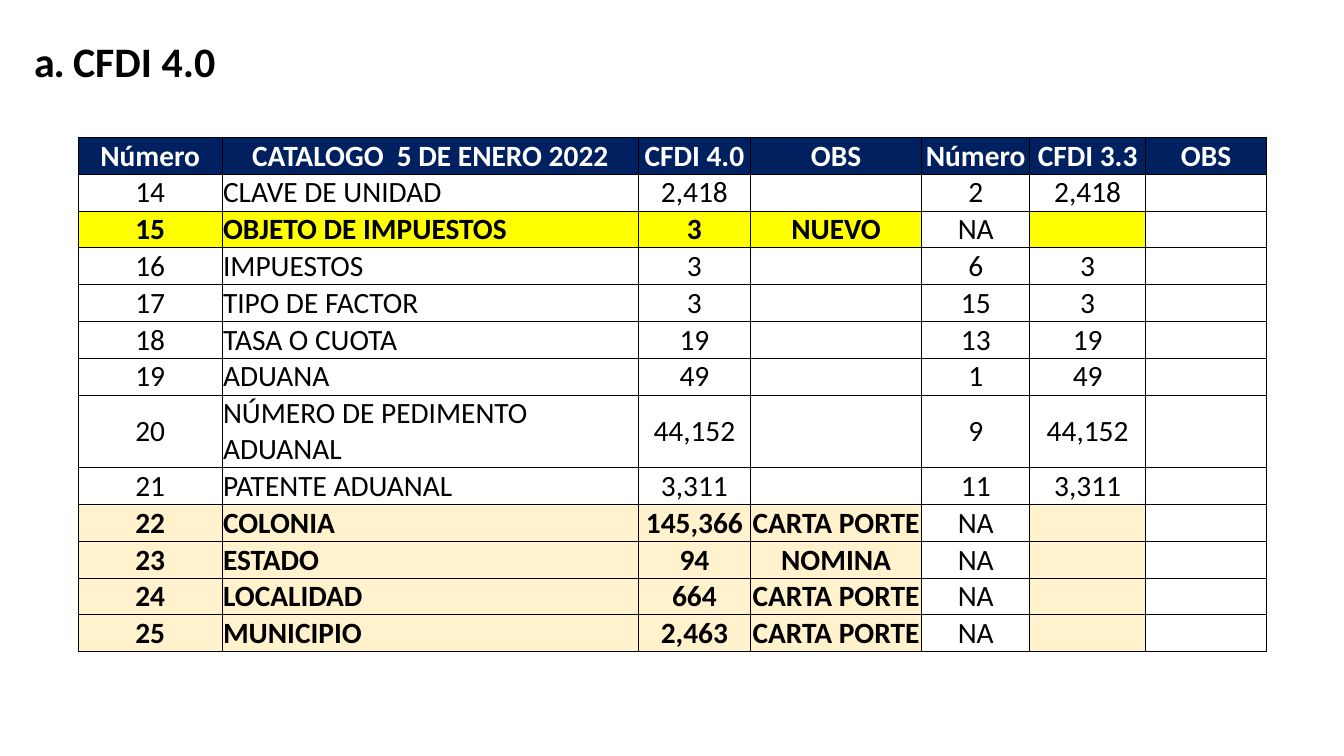
"""Build the slide that compares the CFDI 4.0 and CFDI 3.3 catalogues."""
from lxml.etree import SubElement
from pptx import Presentation
from pptx.dml.color import RGBColor
from pptx.enum.text import MSO_ANCHOR, PP_ALIGN
from pptx.oxml.ns import qn
from pptx.util import Cm, Pt

NAVY, YELLOW, CREAM = "002060", "FFFF00", "FFF2CC"
BLACK, WHITE = "000000", "FFFFFF"
COLUMN_WIDTHS = [3.63, 10.49, 2.82, 4.32, 2.72, 2.92, 3.05]
LINE_HEIGHT = 0.91
NAME_COLUMN = 1
HIGHLIGHTED_COLUMNS = (0, 1, 2, 3, 5)
BOLD_COLUMNS = (0, 1, 2, 3)
TWO_LINE_NAME = "NÚMERO DE PEDIMENTO ADUANAL"

HEADER = ["Número", "CATALOGO  5 DE ENERO 2022", "CFDI 4.0", "OBS", "Número", "CFDI 3.3", "OBS"]
CATALOGUES = [
    (["14", "CLAVE DE UNIDAD", "2,418", "", "2", "2,418", ""], None),
    (["15", "OBJETO DE IMPUESTOS", "3", "NUEVO", "NA", "", ""], YELLOW),
    (["16", "IMPUESTOS", "3", "", "6", "3", ""], None),
    (["17", "TIPO DE FACTOR", "3", "", "15", "3", ""], None),
    (["18", "TASA O CUOTA", "19", "", "13", "19", ""], None),
    (["19", "ADUANA", "49", "", "1", "49", ""], None),
    (["20", TWO_LINE_NAME, "44,152", "", "9", "44,152", ""], None),
    (["21", "PATENTE ADUANAL", "3,311", "", "11", "3,311", ""], None),
    (["22", "COLONIA", "145,366", "CARTA PORTE", "NA", "", ""], CREAM),
    (["23", "ESTADO", "94", "NOMINA", "NA", "", ""], CREAM),
    (["24", "LOCALIDAD", "664", "CARTA PORTE", "NA", "", ""], CREAM),
    (["25", "MUNICIPIO", "2,463", "CARTA PORTE", "NA", "", ""], CREAM),
]


def color(hex_string):
    """Return the colour for a hex string."""
    return RGBColor.from_string(hex_string)


class SlideBuilder:
    """Hold the text style and the current slide."""

    def __init__(self, slide, font_name):
        """Keep the slide and the font."""
        self.slide = slide
        self.font_name = font_name

    def format_run(self, run, size, hex_color, bold):
        """Set the font of one run."""
        run.font.name = self.font_name
        run.font.size = Pt(size)
        run.font.bold = bold
        run.font.color.rgb = color(hex_color)

    def title(self, number, text, left, top, width, height):
        """Place the title, with its number set slightly tighter."""
        title = self.slide.shapes.title
        title.left, title.top, title.width, title.height = map(Cm, (left, top, width, height))
        frame = title.text_frame
        frame.margin_left = frame.margin_right = frame.margin_top = frame.margin_bottom = 0
        frame.vertical_anchor = MSO_ANCHOR.BOTTOM
        frame.word_wrap = True
        paragraph = frame.paragraphs[0]
        paragraph.text = number
        paragraph.add_run().text = text
        paragraph.alignment = PP_ALIGN.LEFT
        for run in paragraph.runs:
            self.format_run(run, 30, BLACK, True)
        paragraph.runs[0]._r.get_or_add_rPr().set("spc", "-90")

    def borders(self, cell):
        """Draw thin black lines on all sides of a cell."""
        properties = cell._tc.get_or_add_tcPr()
        for side in ("a:lnL", "a:lnR", "a:lnT", "a:lnB"):
            line = SubElement(properties, qn(side), w=str(Pt(0.5)))
            fill = SubElement(line, qn("a:solidFill"))
            SubElement(fill, qn("a:srgbClr"), val=BLACK)

    def cell(self, cell, text, fill, hex_color, bold, alignment):
        """Fill, frame and write one table cell."""
        cell.margin_left = cell.margin_right = cell.margin_top = Cm(0.02)
        cell.margin_bottom = 0
        cell.vertical_anchor = MSO_ANCHOR.MIDDLE
        self.borders(cell)
        if fill:
            cell.fill.solid()
            cell.fill.fore_color.rgb = color(fill)
        else:
            cell.fill.background()
        if text:
            paragraph = cell.text_frame.paragraphs[0]
            paragraph.text = text
            paragraph.alignment = alignment
            self.format_run(paragraph.runs[0], 21, hex_color, bold)

    def table(self, left, top):
        """Add the catalogue table with its header row."""
        lines = [2 if TWO_LINE_NAME in values else 1 for values, _ in CATALOGUES]
        heights = [LINE_HEIGHT * count for count in [1] + lines]
        frame = self.slide.shapes.add_table(
            len(heights), len(HEADER), Cm(left), Cm(top), Cm(sum(COLUMN_WIDTHS)), Cm(sum(heights)))
        table = frame.table
        table.first_row = table.horz_banding = False
        for column, width in zip(table.columns, COLUMN_WIDTHS):
            column.width = Cm(width)
        for row, height in zip(table.rows, heights):
            row.height = Cm(height)
        for column, text in enumerate(HEADER):
            self.cell(table.cell(0, column), text, NAVY, WHITE, True, PP_ALIGN.CENTER)
        for row, (values, highlight) in enumerate(CATALOGUES, start=1):
            for column, text in enumerate(values):
                fill = highlight if column in HIGHLIGHTED_COLUMNS else None
                bold = highlight is not None and column in BOLD_COLUMNS
                alignment = PP_ALIGN.LEFT if column == NAME_COLUMN else PP_ALIGN.CENTER
                self.cell(table.cell(row, column), text, fill, BLACK, bold, alignment)


def main():
    """Create and save the presentation."""
    presentation = Presentation()
    presentation.slide_width = Cm(33.87)
    presentation.slide_height = Cm(19.05)
    builder = SlideBuilder(presentation.slides.add_slide(presentation.slide_layouts[5]), "Calibri")
    builder.title("a. ", "CFDI 4.0", 0.86, 0.84, 22.6, 1.32)
    builder.table(1.97, 3.46)
    presentation.save("out.pptx")


if __name__ == "__main__":
    main()
